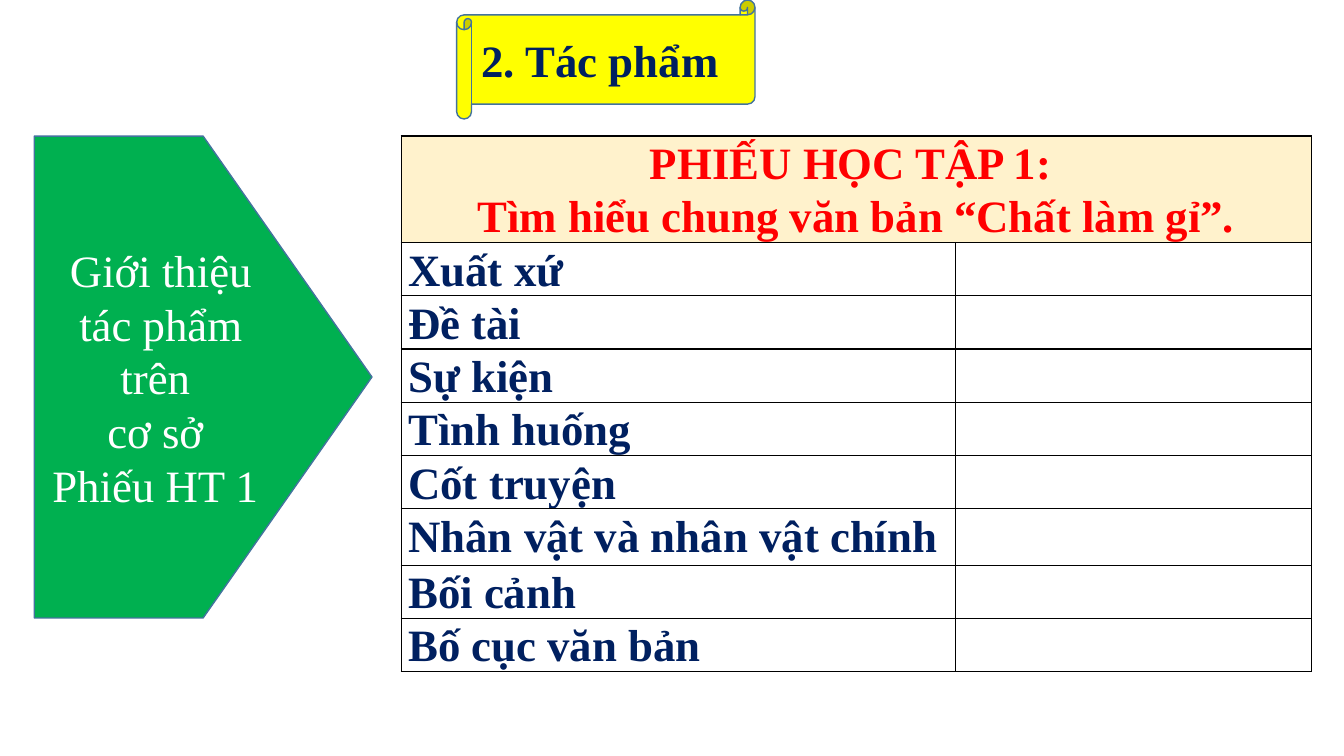
from dataclasses import dataclass

import pptx
import pptx.dml.color
import pptx.enum.shapes
import pptx.enum.text
import pptx.oxml
import pptx.util

Pt = pptx.util.Pt
Align = pptx.enum.text.PP_ALIGN
Kind = pptx.enum.shapes.MSO_SHAPE

FONT = "Times New Roman"
SIZE = 32
HEX = {
    "yellow": "FFFF00", "green": "00B050", "edge": "43739E",
    "navy": "002060", "red": "FF0000", "cream": "FFF2CC",
    "white": "FFFFFF", "black": "000000",
}
TITLE = ["PHIẾU HỌC TẬP 1: ", "Tìm hiểu chung văn bản “Chất làm gỉ”."]
LONG = "Nhân vật và nhân vật chính"
TOPICS = ["Xuất xứ", "Đề tài", "Sự kiện", "Tình huống", "Cốt truyện",
          LONG, "Bối cảnh", "Bố cục văn bản"]


@dataclass
class Style:
    color: str
    bold: bool
    align: Align
    space: float = 1.0


@dataclass
class Panel:
    kind: Kind
    box: tuple[float, float, float, float]
    fill: str
    lines: list[str]
    style: Style


PANELS = [
    Panel(Kind.HORIZONTAL_SCROLL, (326.2, 0, 213.1, 85), "yellow",
          ["2. Tác phẩm"], Style("navy", True, Align.LEFT)),
    Panel(Kind.PENTAGON, (24.5, 97.2, 241.2, 344.2), "green",
          ["Giới thiệu tác phẩm trên ", "cơ sở ", "Phiếu HT 1 "],
          Style("white", False, Align.CENTER)),
]
HEAD = Style("red", True, Align.CENTER, 1.07)
TOPIC = Style("navy", True, Align.JUSTIFY, 1.07)


def rgb(name: str) -> pptx.dml.color.RGBColor:
    return pptx.dml.color.RGBColor.from_string(HEX[name])


def write(frame, lines: list[str], style: Style) -> None:
    frame.text = "\n".join(lines)
    for para in frame.paragraphs:
        para.alignment = style.align
        para.line_spacing = style.space
        font = para.font
        font.name, font.size, font.bold = FONT, Pt(SIZE), style.bold
        font.color.rgb = rgb(style.color)


def draw_panel(slide, panel: Panel) -> None:
    shape = slide.shapes.add_shape(panel.kind, *map(Pt, panel.box))
    shape.shadow.inherit = False
    shape.fill.solid()
    shape.fill.fore_color.rgb = rgb(panel.fill)
    shape.line.color.rgb = rgb("edge")
    shape.line.width = Pt(1)
    shape.text_frame.vertical_anchor = pptx.enum.text.MSO_ANCHOR.MIDDLE
    write(shape.text_frame, panel.lines, panel.style)


def dress(cell, fill: str) -> None:
    """Give a cell thin black borders, narrow margins and a fill."""
    cell.margin_left = cell.margin_right = Pt(5)
    cell.margin_top = cell.margin_bottom = 0
    props = cell._tc.get_or_add_tcPr()
    for side in ("lnL", "lnR", "lnT", "lnB"):
        props.append(pptx.oxml.parse_xml(
            f'<a:{side} xmlns:a="http://schemas.openxmlformats.org/drawingml'
            f'/2006/main" w="{Pt(1)}"><a:solidFill><a:srgbClr '
            f'val="{HEX["black"]}"/></a:solidFill></a:{side}>'))
    cell.fill.solid()
    cell.fill.fore_color.rgb = rgb(fill)


def draw_table(slide) -> None:
    box = map(Pt, (286.6, 97.2, 650.2, 411))
    table = slide.shapes.add_table(len(TOPICS) + 1, 2, *box).table
    for col, width in zip(table.columns, (396, 254.2)):
        col.width = Pt(width)
    for row, name in zip(table.rows, [None] + TOPICS):
        row.height = Pt({None: 42.5, LONG: 40.3}.get(name, 33.1))
        for cell in row.cells:
            dress(cell, "white" if name else "cream")
        if name:
            write(row.cells[0].text_frame, [name], TOPIC)
    head = table.cell(0, 0)
    head.merge(table.cell(0, 1))
    write(head.text_frame, TITLE, HEAD)


def main() -> None:
    deck = pptx.Presentation()
    deck.slide_width, deck.slide_height = Pt(960), Pt(540)
    slide = deck.slides.add_slide(deck.slide_layouts[6])
    scroll, arrow = PANELS
    draw_panel(slide, scroll)
    draw_table(slide)
    draw_panel(slide, arrow)
    deck.save("out.pptx")


if __name__ == "__main__":
    main()
